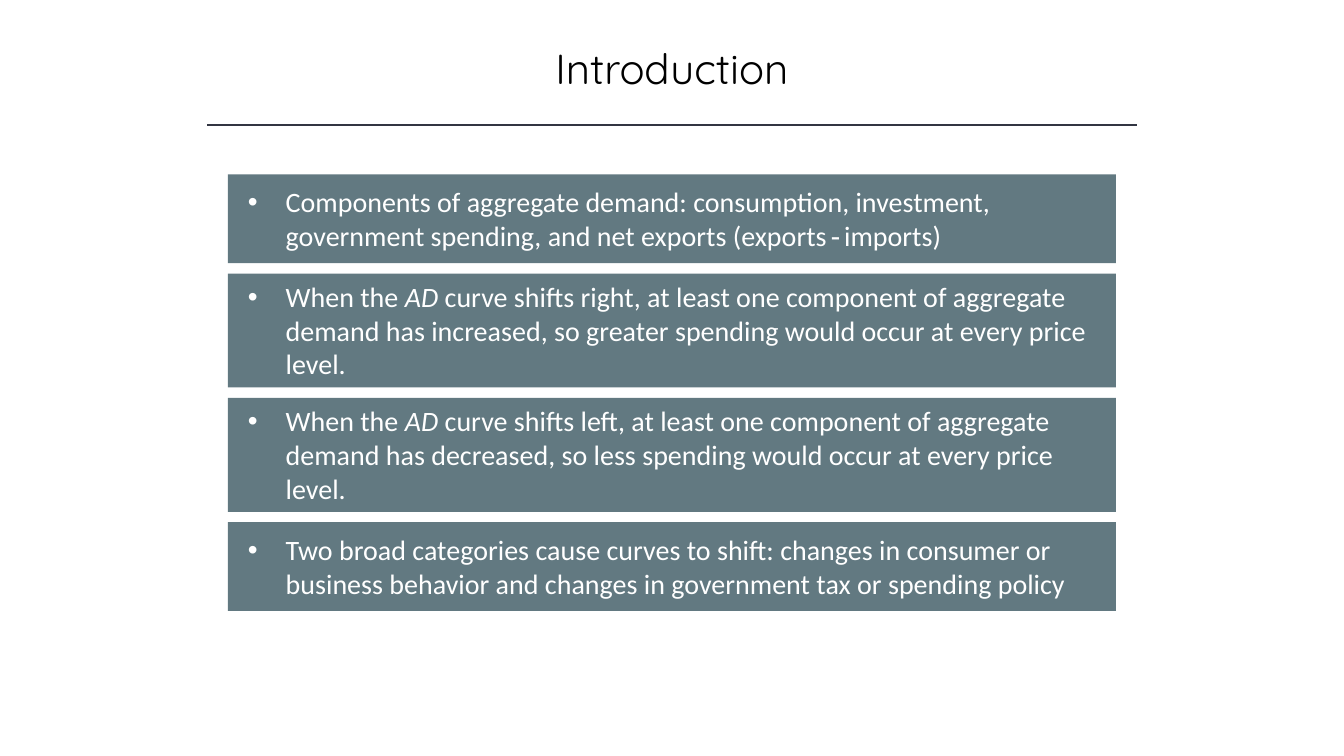
from lxml.etree import SubElement
from pptx import Presentation
from pptx.dml.color import RGBColor
from pptx.enum.shapes import MSO_CONNECTOR, MSO_SHAPE
from pptx.enum.text import MSO_ANCHOR, PP_ALIGN
from pptx.oxml.ns import qn
from pptx.util import Pt

COLORS = {"panel": "627981", "rule": "323542", "title": "000000", "text": "FFFFFF"}
BODY_FONT, TITLE_FONT, HYPHEN_FONT = "Calibri", "Quicksand", "DejaVu Sans Mono"
PANEL_GAP = 7.4
BULLET_INDENT = 27

# Each point: panel height, text height, spans of text with their format
POINTS = [
    (63.4, 55.4, [
        ("Components of aggregate demand: consumption, investment, "
         "government spending, and net exports (exports", {}),
        ("-", {"font": HYPHEN_FONT}),
        ("imports)", {})]),
    (81.4, 79.9, [
        ("When the ", {}),
        ("AD", {"italic": True}),
        (" curve shifts right, at least one component of aggregate demand has "
         "increased, so greater spending would occur at every price level.", {})]),
    (81.4, 79.9, [
        ("When the ", {}),
        ("AD", {"italic": True}),
        (" curve shifts left, at least one component of aggregate demand has "
         "decreased, so less spending would occur at every price level.", {})]),
    (63.4, 55.4, [
        ("Two broad categories cause curves to shift: changes in consumer or "
         "business behavior and changes in government tax or spending policy", {})]),
]


def color(name):
    return RGBColor.from_string(COLORS[name])


def add_text(para, text, font=BODY_FONT, size=20, fill="text", italic=False):
    span = para.add_run()
    span.text = text
    span.font.name = font
    span.font.size = Pt(size)
    span.font.italic = italic
    span.font.color.rgb = color(fill)


def add_bullet(para, indent):
    properties = para._p.get_or_add_pPr()
    properties.set("marL", str(Pt(indent)))
    properties.set("indent", str(-Pt(indent)))
    SubElement(properties, qn("a:buFont")).set("typeface", "Arial")
    SubElement(properties, qn("a:buChar")).set("char", "•")


def add_rectangle(page, left, top, width, height):
    box = page.shapes.add_shape(
        MSO_SHAPE.RECTANGLE, Pt(left), Pt(top), Pt(width), Pt(height))
    box.shadow.inherit = False
    box.fill.solid()
    box.fill.fore_color.rgb = color("panel")
    box.line.fill.background()
    return box


def add_header(page, left, top, width, height):
    # Title
    box = page.shapes.add_textbox(Pt(left), Pt(top), Pt(width), Pt(height))
    box.text_frame.word_wrap = True
    para = box.text_frame.paragraphs[0]
    para.alignment = PP_ALIGN.CENTER
    add_text(para, "Introduction", font=TITLE_FONT, size=30, fill="title")

    # Rule below the title
    inset, rule_top = 28, top + 62.6
    rule = page.shapes.add_connector(
        MSO_CONNECTOR.STRAIGHT, Pt(left + inset), Pt(rule_top),
        Pt(left + width - inset), Pt(rule_top))
    rule.line.color.rgb = color("rule")
    rule.line.width = Pt(1)
    SubElement(rule._element.spPr, qn("a:effectLst"))


def add_point(page, left, top, width, height, text_height, spans):
    # Panel, with the text centred vertically inside it
    add_rectangle(page, left, top, width, height)
    box = add_rectangle(page, left + 7.2, top + (height - text_height) / 2,
                        width - 19.4, text_height)
    frame = box.text_frame
    frame.word_wrap = True
    frame.vertical_anchor = MSO_ANCHOR.TOP
    para = frame.paragraphs[0]
    para.alignment = PP_ALIGN.LEFT
    add_bullet(para, BULLET_INDENT)
    for text, style in spans:
        add_text(para, text, **style)


def add_points(page, left, top, width):
    for height, text_height, spans in POINTS:
        add_point(page, left, top, width, height, text_height, spans)
        top += height + PANEL_GAP


def main():
    deck = Presentation()
    deck.slide_width, deck.slide_height = Pt(960), Pt(540)
    page = deck.slides.add_slide(deck.slide_layouts[6])
    add_header(page, 120, 26.6, 720, 44)
    add_points(page, 162.8, 124.6, 634.4)
    deck.save("out.pptx")


if __name__ == "__main__":
    main()
